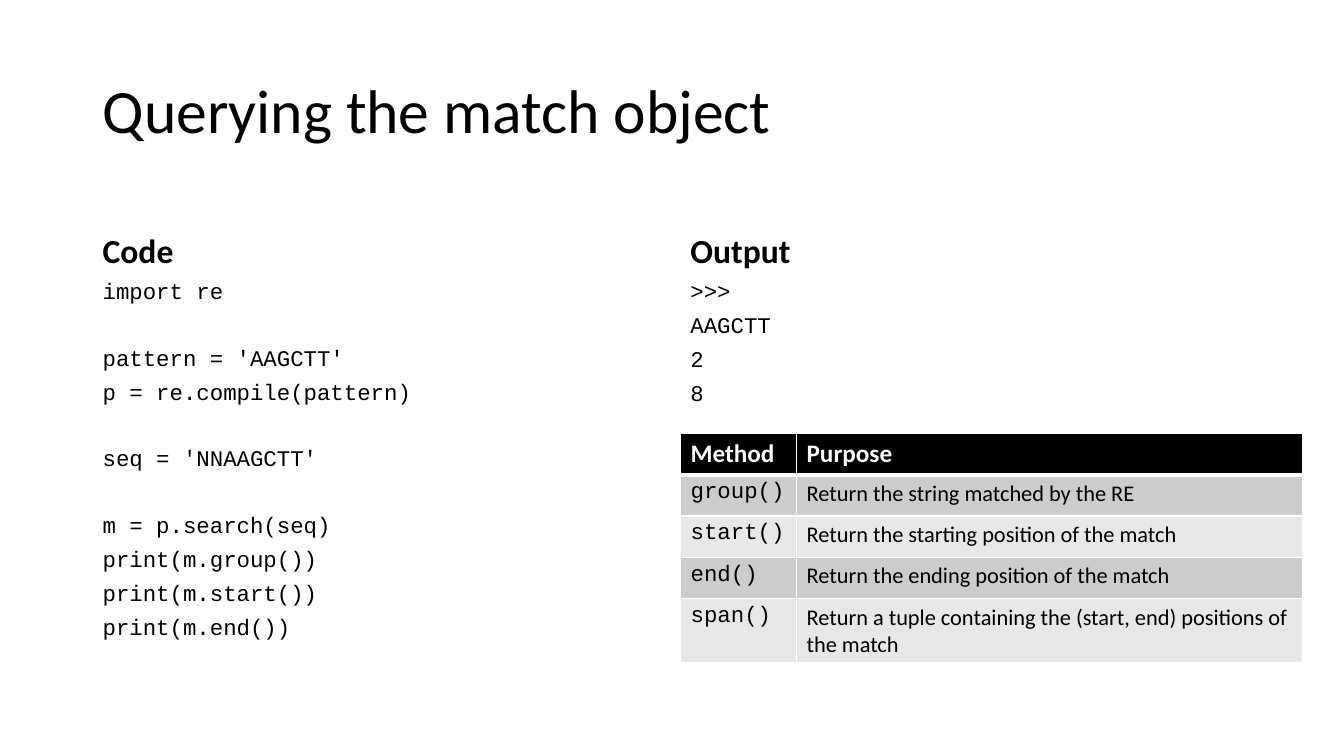
from lxml.etree import SubElement
from pptx import Presentation
from pptx.dml.color import RGBColor as Rgb
from pptx.enum.text import MSO_ANCHOR as Anchor
from pptx.oxml.ns import qn
from pptx.util import Inches, Pt

COLOURS = {"ink": "000000", "paper": "FFFFFF", "odd_row": "CCCCCC", "even_row": "E7E7E7"}

FONTS = {
    "title": {"name": "Calibri", "size": Pt(44), "bold": False},
    "heading": {"name": "Calibri", "size": Pt(24), "bold": True},
    "code": {"name": "Courier New", "size": Pt(16), "bold": False},
    "column_head": {"name": "Calibri", "size": Pt(18), "bold": True},
    "purpose": {"name": "Calibri", "size": Pt(16), "bold": False},
}

CODE_GAP = 8
CODE_PITCH = 23.4

CODE_BLOCKS = [
    ["import re"],
    ["pattern = 'AAGCTT'", "p = re.compile(pattern)"],
    ["seq = 'NNAAGCTT'"],
    ["m = p.search(seq)", "print(m.group())", "print(m.start())", "print(m.end())"],
]
OUTPUT_BLOCKS = [[">>>", "AAGCTT", "2", "8"]]

METHODS = [
    ("Method", "Purpose"),
    ("group()", "Return the string matched by the RE"),
    ("start()", "Return the starting position of the match"),
    ("end()", "Return the ending position of the match"),
    ("span()", "Return a tuple containing the (start, end) positions of the match"),
]


def colour(key):
    return Rgb.from_string(COLOURS[key])


def write(paragraph, words, font, ink="ink", **spacing):
    run = paragraph.add_run()
    run.text = words
    for attribute, value in FONTS[font].items():
        setattr(run.font, attribute, value)
    run.font.color.rgb = colour(ink)
    for attribute, value in spacing.items():
        setattr(paragraph, attribute, value)


def add_frame(slide, left, top, width, height, anchor):
    frame = slide.shapes.add_textbox(*map(Inches, (left, top, width, height))).text_frame
    frame.word_wrap = True
    frame.vertical_anchor = anchor
    return frame


def add_title(slide, left, top, width, height):
    frame = add_frame(slide, left, top, width, height, Anchor.MIDDLE)
    write(frame.paragraphs[0], "Querying the match object", "title", line_spacing=0.9)


def add_listing(slide, left, top, width, height, heading, blocks):
    heading_height = 0.9
    frame = add_frame(slide, left, top, width, heading_height, Anchor.BOTTOM)
    write(frame.paragraphs[0], heading, "heading", line_spacing=0.9)

    frame = add_frame(slide, left, top + heading_height, width,
                      height - heading_height, Anchor.TOP)
    paragraph = frame.paragraphs[0]
    for block_index, block in enumerate(blocks):
        for line_index, line in enumerate(block):
            if block_index or line_index:
                paragraph = frame.add_paragraph()
            starts_block = block_index and not line_index
            gap = CODE_GAP + (CODE_PITCH if starts_block else 0)
            write(paragraph, line, "code", line_spacing=0.85, space_before=Pt(gap))


def set_borders(cell, widths):
    properties = cell._tc.get_or_add_tcPr()
    for index, (side, width) in enumerate(widths.items()):
        border = properties.makeelement(qn(f"a:{side}"), {"w": str(Pt(width))})
        fill = SubElement(border, qn("a:solidFill"))
        SubElement(fill, qn("a:srgbClr"), val=COLOURS["paper"])
        properties.insert(index, border)


def add_methods(slide, left, top, width, row_height, last_height):
    row_heights = [row_height] * (len(METHODS) - 1) + [last_height]
    table = slide.shapes.add_table(
        len(METHODS), 2, *map(Inches, (left, top, width, sum(row_heights)))).table
    name_width = 1.15
    for column, column_width in zip(table.columns, (name_width, width - name_width)):
        column.width = Inches(column_width)
    for row_index, (row, entries) in enumerate(zip(table.rows, METHODS)):
        row.height = Inches(row_heights[row_index])
        if row_index == 0:
            fill, ink, fonts = "ink", "paper", ("column_head", "column_head")
        else:
            fill = "odd_row" if row_index % 2 else "even_row"
            ink, fonts = "ink", ("code", "purpose")
        for cell, words, font in zip(row.cells, entries, fonts):
            cell.fill.solid()
            cell.fill.fore_color.rgb = colour(fill)
            write(cell.text_frame.paragraphs[0], words, font, ink)
            set_borders(cell, {"lnL": 1, "lnR": 1,
                               "lnT": 3 if row_index == 1 else 1,
                               "lnB": 3 if row_index == 0 else 1})


def main():
    deck = Presentation()
    deck.slide_width, deck.slide_height = Inches(13.33), Inches(7.5)
    slide = deck.slides.add_slide(deck.slide_layouts[6])
    add_title(slide, 0.92, 0.4, 11.5, 1.45)
    add_listing(slide, 0.92, 1.84, 5.64, 4.93, "Code", CODE_BLOCKS)
    add_listing(slide, 6.75, 1.84, 5.67, 4.93, "Output", OUTPUT_BLOCKS)
    add_methods(slide, 6.75, 4.3, 6.17, 0.41, 0.62)
    deck.save("out.pptx")


if __name__ == "__main__":
    main()
